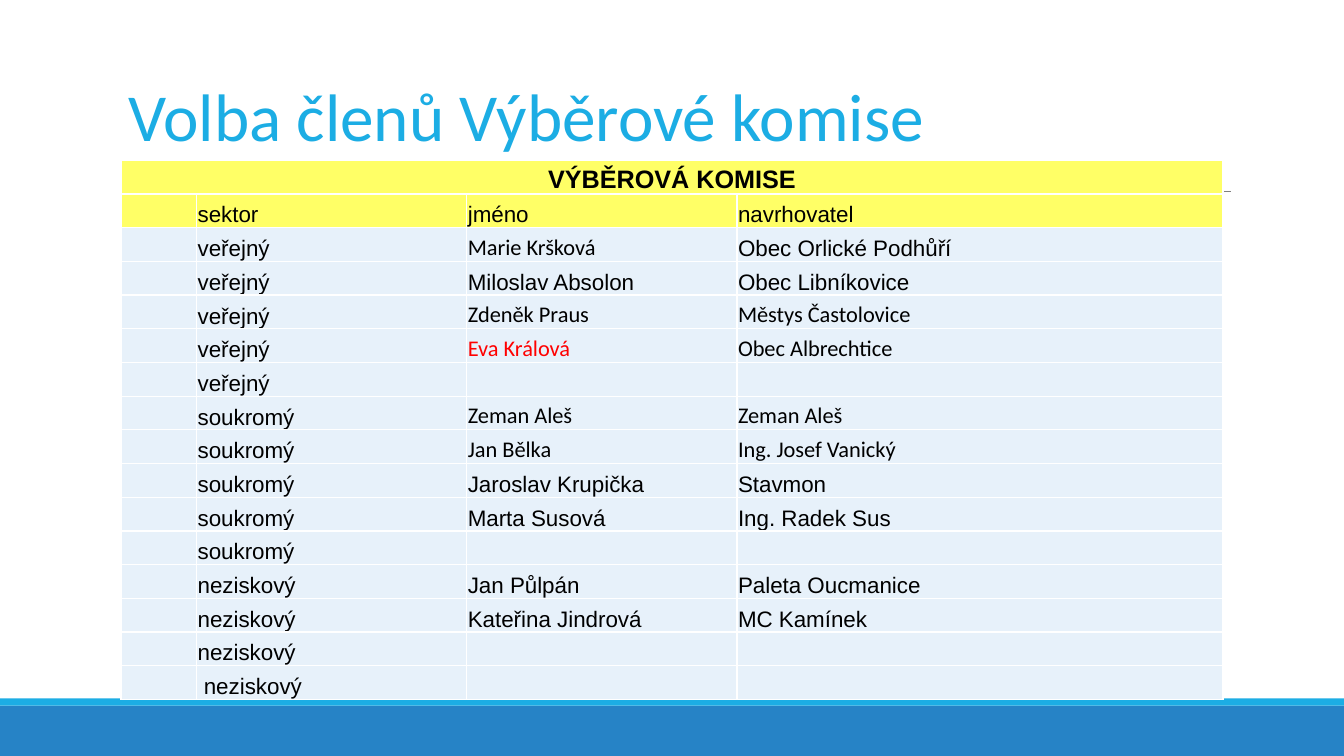
import pptx
import pptx.dml.color
import pptx.enum.shapes
import pptx.enum.text
import pptx.oxml
import pptx.oxml.ns
import pptx.util
from dataclasses import dataclass

Inches = pptx.util.Inches
Pt = pptx.util.Pt
ANCHOR = pptx.enum.text.MSO_ANCHOR
ALIGN = pptx.enum.text.PP_ALIGN


@dataclass(frozen=True)
class Theme:
    accent: str = "1CADE4"
    band: str = "2683C6"
    rule: str = "7F7F7F"
    header: str = "FFFF66"
    row: str = "E7F1FA"
    border: str = "FFFFFF"
    ink: str = "000000"
    alert: str = "FF0000"
    heading_font: str = "Calibri"
    table_font: str = "Arial"
    title_size: int = 48
    caption_size: int = 18
    cell_size: int = 16


COLUMNS = (0.75, 2.68, 2.68, 4.82)
ROW_HEIGHT = 5.35 / 16
CAPTION = "VÝBĚROVÁ KOMISE"
HEADINGS = ("sektor", "jméno", "navrhovatel")
MEMBERS = (
    ("veřejný", "Marie Kršková", "Obec Orlické Podhůří"),
    ("veřejný", "Miloslav Absolon", "Obec Libníkovice"),
    ("veřejný", "Zdeněk Praus", "Městys Častolovice"),
    ("veřejný", "Eva Králová", "Obec Albrechtice"),
    ("veřejný", "", ""),
    ("soukromý", "Zeman Aleš", "Zeman Aleš"),
    ("soukromý", "Jan Bělka", "Ing. Josef Vanický"),
    ("soukromý", "Jaroslav Krupička", "Stavmon"),
    ("soukromý", "Marta Susová", "Ing. Radek Sus"),
    ("soukromý", "", ""),
    ("neziskový", "Jan Půlpán", "Paleta Oucmanice"),
    ("neziskový", "Kateřina Jindrová", "MC Kamínek"),
    ("neziskový", "", ""),
    (" neziskový", "", ""),
)
CALIBRI_ENTRIES = {
    "Marie Kršková", "Zdeněk Praus", "Městys Častolovice", "Eva Králová",
    "Obec Albrechtice", "Zeman Aleš", "Jan Bělka", "Ing. Josef Vanický",
}
ALERT_ENTRIES = {"Eva Králová"}


class SlideBuilder:
    def __init__(self, prs, theme):
        self.theme = theme
        self.s = prs.slides.add_slide(prs.slide_layouts[5])

    def color(self, value):
        return pptx.dml.color.RGBColor.from_string(value)

    def format_runs(self, p, font, size, color, bold=False):
        for r in p.runs:
            r.font.name = font
            r.font.size = Pt(size)
            r.font.bold = bold
            r.font.color.rgb = self.color(color)

    def bar(self, x, y, w, h, fill):
        sp = self.s.shapes.add_shape(
            pptx.enum.shapes.MSO_SHAPE.RECTANGLE,
            Inches(x), Inches(y), Inches(w), Inches(h))
        sp.shadow.inherit = False
        sp.fill.solid()
        sp.fill.fore_color.rgb = self.color(fill)
        sp.line.fill.background()

    def rule(self, x1, x2, y):
        line = self.s.shapes.add_connector(
            pptx.enum.shapes.MSO_CONNECTOR.STRAIGHT,
            Inches(x1), Inches(y), Inches(x2), Inches(y))
        line.line.color.rgb = self.color(self.theme.rule)
        line.line.width = Pt(0.75)
        line._element.spPr.append(pptx.oxml.parse_xml(
            f'<a:effectLst {pptx.oxml.ns.nsdecls("a")}/>'))

    def title(self, text, x, y, w, h):
        sp = self.s.shapes.title
        sp.left, sp.top, sp.width, sp.height = map(Inches, (x, y, w, h))
        tf = sp.text_frame
        tf.text = text
        tf.auto_size = pptx.enum.text.MSO_AUTO_SIZE.NONE
        tf.word_wrap = True
        tf.vertical_anchor = ANCHOR.BOTTOM
        p = tf.paragraphs[0]
        p.alignment = ALIGN.LEFT
        p.line_spacing = 0.85
        self.format_runs(p, self.theme.heading_font, self.theme.title_size, self.theme.accent)

    def cell(self, cell, text, fill, size, bold=False, align=ALIGN.LEFT):
        t = self.theme
        cell.margin_left = cell.margin_right = cell.margin_top = Inches(0.01)
        cell.margin_bottom = 0
        cell.vertical_anchor = ANCHOR.BOTTOM
        # Borders come before the fill in the cell properties
        tcPr = cell._tc.get_or_add_tcPr()
        for side in ("lnL", "lnR", "lnT", "lnB"):
            tcPr.append(pptx.oxml.parse_xml(
                f'<a:{side} {pptx.oxml.ns.nsdecls("a")} w="12700"><a:solidFill>'
                f'<a:srgbClr val="{t.border}"/></a:solidFill></a:{side}>'))
        cell.fill.solid()
        cell.fill.fore_color.rgb = self.color(fill)
        if text:
            cell.text_frame.text = text
            p = cell.text_frame.paragraphs[0]
            p.alignment = align
            font = t.heading_font if text in CALIBRI_ENTRIES else t.table_font
            ink = t.alert if text in ALERT_ENTRIES else t.ink
            self.format_runs(p, font, size, ink, bold)

    def committee_table(self, x, y):
        t = self.theme
        rows = [(CAPTION, "", "", ""), ("", *HEADINGS)]
        rows += [("", *member) for member in MEMBERS]
        table = self.s.shapes.add_table(
            len(rows), len(COLUMNS), Inches(x), Inches(y),
            Inches(sum(COLUMNS)), Inches(ROW_HEIGHT * len(rows))).table
        table.first_row = table.horz_banding = False
        for column, width in zip(table.columns, COLUMNS):
            column.width = Inches(width)
        for i, values in enumerate(rows):
            table.rows[i].height = Inches(ROW_HEIGHT)
            fill = t.header if i < 2 else t.row
            for j, text in enumerate(values):
                if i == 0:
                    self.cell(table.cell(i, j), text, fill, t.caption_size, True, ALIGN.CENTER)
                else:
                    self.cell(table.cell(i, j), text, fill, t.cell_size)
        table.cell(0, 0).merge(table.cell(0, len(COLUMNS) - 1))


def main():
    prs = pptx.Presentation()
    prs.slide_width, prs.slide_height = Inches(13.33), Inches(7.5)
    theme = Theme()
    slide = SlideBuilder(prs, theme)

    # Footer bands and the rule under the title
    slide.bar(0, 7, 13.33, 0.5, theme.band)
    slide.bar(0, 6.93, 13.33, 0.07, theme.accent)
    slide.rule(1.31, 12.21, 1.9)

    # Title and committee members
    slide.title("Volba členů Výběrové komise", 1.17, 0.27, 11, 1.32)
    slide.committee_table(1.2, 1.59)

    prs.save("out.pptx")


if __name__ == "__main__":
    main()
